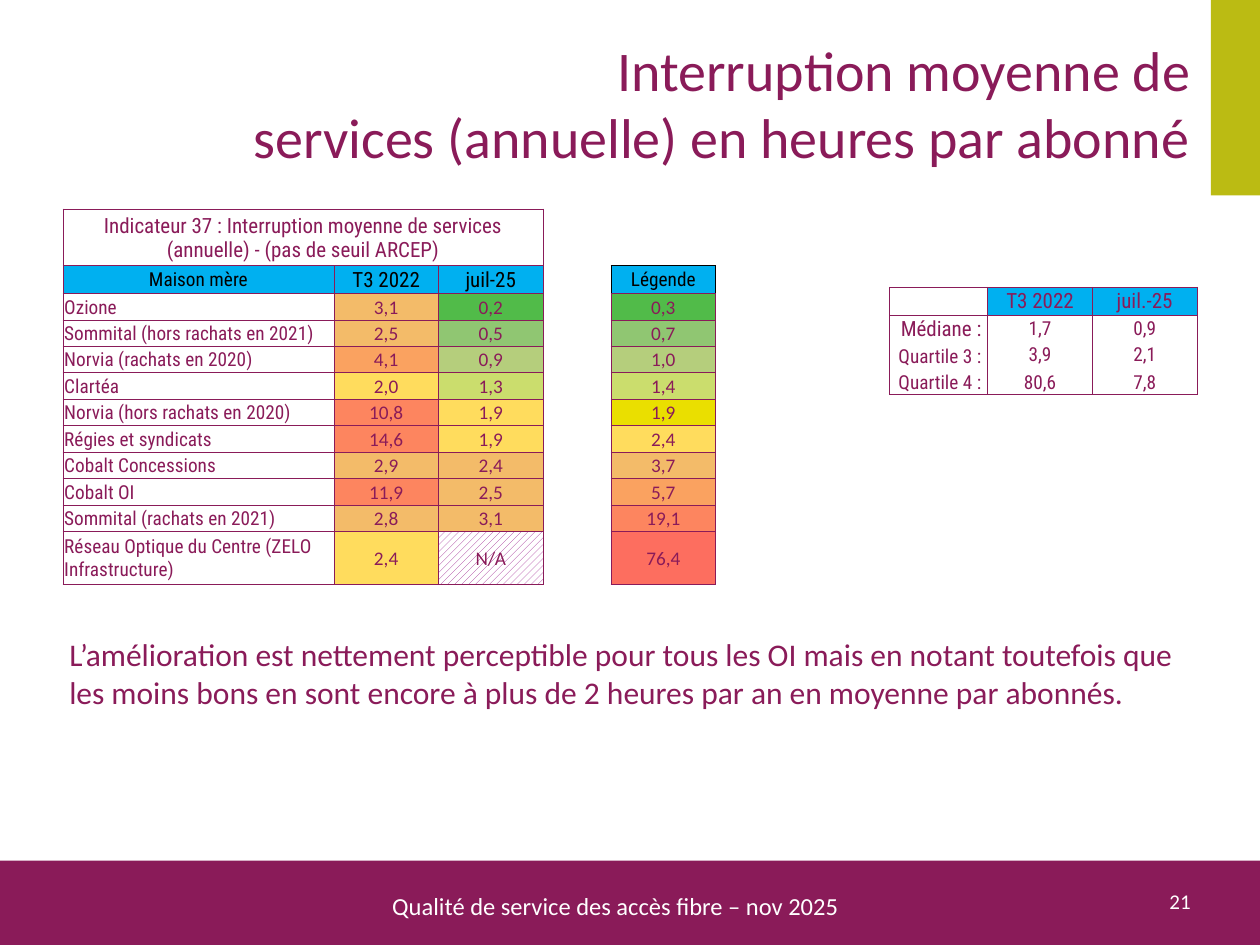
from dataclasses import dataclass

from lxml import etree
from pptx import Presentation
from pptx.dml.color import RGBColor
from pptx.enum.dml import MSO_PATTERN
from pptx.enum.shapes import MSO_SHAPE
from pptx.enum.text import MSO_ANCHOR, PP_ALIGN
from pptx.oxml.ns import qn
from pptx.util import Inches, Pt

LEFT, CENTER, RIGHT = PP_ALIGN.LEFT, PP_ALIGN.CENTER, PP_ALIGN.RIGHT
TOP, MIDDLE, BOTTOM = MSO_ANCHOR.TOP, MSO_ANCHOR.MIDDLE, MSO_ANCHOR.BOTTOM
RECTANGLE = MSO_SHAPE.RECTANGLE
HATCH = MSO_PATTERN.UPWARD_DIAGONAL

BODY_FONT = "Calibri"
TABLE_FONT = "Roboto Condensed"
COLORS = {
    "plum": "8A1B59", "olive": "BBBB13", "white": "FFFFFF", "black": "000000",
    "header": "00B0F0", "hatch": "A02B93",
    "green": "51BB49", "sage": "90C672", "moss": "B5CE7C", "lime": "CBDD6D",
    "lemon": "EADF00", "yellow": "FFDC5D", "sand": "F3BB69", "orange": "FAA260",
    "coral": "FD855F", "red": "FD6E5F",
}
VALUE_WIDTH = 0.83
HEADER_HEIGHT, ROW_HEIGHT, TALL_HEIGHT = 0.22, 0.21, 0.42


@dataclass
class Label:
    text: str
    left: float
    top: float
    width: float
    height: float
    size: int
    color: str = "plum"
    align: PP_ALIGN = LEFT
    anchor: MSO_ANCHOR = TOP
    wrap: bool = True


@dataclass
class Cell:
    text: str = ""
    fill: str = ""
    size: int = 11
    font: str = TABLE_FONT
    color: str = "plum"
    align: PP_ALIGN = CENTER
    anchor: MSO_ANCHOR = MIDDLE
    right_margin: float = 0.01
    edges: str = "LRTB"
    edge_color: str = "plum"


LABELS = [
    Label("Qualité de service des accès fibre – nov 2025", 2.39, 7.02, 4.99, 0.34, 14, "white", CENTER),
    Label("Interruption moyenne de\vservices (annuelle) en heures par abonné",
          0.5, 0.19, 9, 1.25, 32, align=RIGHT, anchor=MIDDLE),
    Label("L’amélioration est nettement perceptible pour tous les OI mais en notant toutefois que "
          "les moins bons en sont encore à plus de 2 heures par an en moyenne par abonnés.",
          0.5, 4.99, 9, 0.85, 18),
    Label("21", 9.22, 7.02, 0.28, 0.27, 12, "white", RIGHT, MIDDLE, False),
]
OPERATORS = [
    ("Ozione", "3,1", "sand", "0,2", "green"),
    ("Sommital (hors rachats en 2021)", "2,5", "sand", "0,5", "sage"),
    ("Norvia (rachats en 2020)", "4,1", "orange", "0,9", "moss"),
    ("Clartéa", "2,0", "yellow", "1,3", "lime"),
    ("Norvia (hors rachats en 2020)", "10,8", "coral", "1,9", "yellow"),
    ("Régies et syndicats", "14,6", "coral", "1,9", "yellow"),
    ("Cobalt Concessions", "2,9", "sand", "2,4", "sand"),
    ("Cobalt OI", "11,9", "coral", "2,5", "sand"),
    ("Sommital (rachats en 2021)", "2,8", "sand", "3,1", "sand"),
    ("Réseau Optique du Centre (ZELO Infrastructure)", "2,4", "yellow", "N/A", "hatch"),
]
LEGEND = [
    ("0,3", "green"), ("0,7", "sage"), ("1,0", "moss"), ("1,4", "lime"), ("1,9", "lemon"),
    ("2,4", "yellow"), ("3,7", "sand"), ("5,7", "orange"), ("19,1", "coral"), ("76,4", "red"),
]
STATISTICS = [
    ("Médiane :", "1,7", "0,9", 12, "LRT", MIDDLE, MIDDLE),
    ("Quartile 3 :", "3,9", "2,1", 11, "LR", BOTTOM, MIDDLE),
    ("Quartile 4 :", "80,6", "7,8", 11, "LRB", BOTTOM, BOTTOM),
]


def rgb(name: str) -> RGBColor:
    return RGBColor.from_string(COLORS[name])


def format_text(frame, text: str, size: int, font: str, color: str, align: PP_ALIGN) -> None:
    frame.text = text
    para = frame.paragraphs[0]
    para.alignment = align
    for span in para.runs:
        span.font.size = Pt(size)
        span.font.name = font
        span.font.color.rgb = rgb(color)


def draw_band(page, left: float, top: float, width: float, height: float, color: str) -> None:
    band = page.shapes.add_shape(RECTANGLE, Inches(left), Inches(top), Inches(width), Inches(height))
    band.shadow.inherit = False
    band.fill.solid()
    band.fill.fore_color.rgb = rgb(color)
    band.line.fill.background()


def draw_label(page, label: Label) -> None:
    box = page.shapes.add_textbox(
        Inches(label.left), Inches(label.top), Inches(label.width), Inches(label.height))
    frame = box.text_frame
    frame.word_wrap = label.wrap
    frame.vertical_anchor = label.anchor
    frame.margin_left = frame.margin_right = Inches(0.05)
    frame.margin_top = frame.margin_bottom = Inches(0.05)
    format_text(frame, label.text, label.size, BODY_FONT, label.color, label.align)


def draw_edges(target, cell: Cell) -> None:
    properties = target._tc.get_or_add_tcPr()
    for side in "LRTB":
        line = etree.SubElement(properties, qn(f"a:ln{side}"), w=str(Pt(0.5)))
        if side in cell.edges:
            color = "plum" if side == "B" else cell.edge_color
            fill = etree.SubElement(line, qn("a:solidFill"))
            etree.SubElement(fill, qn("a:srgbClr"), val=COLORS[color])
        else:
            etree.SubElement(line, qn("a:noFill"))


def draw_cell(target, cell: Cell) -> None:
    draw_edges(target, cell)
    if cell.fill == "hatch":
        target.fill.patterned()
        target.fill.pattern = HATCH
        target.fill.fore_color.rgb = rgb("hatch")
        target.fill.back_color.rgb = rgb("white")
    elif cell.fill:
        target.fill.solid()
        target.fill.fore_color.rgb = rgb(cell.fill)
    else:
        target.fill.background()
    target.margin_left = target.margin_top = Inches(0.01)
    target.margin_right = Inches(cell.right_margin)
    target.margin_bottom = 0
    target.vertical_anchor = cell.anchor
    format_text(target.text_frame, cell.text, cell.size, cell.font, cell.color, cell.align)
    target.text_frame.paragraphs[0].font.size = Pt(cell.size)


def draw_table(page, left: float, top: float, widths: list[float], heights: list[float],
               rows: list[list[Cell]]):
    table = page.shapes.add_table(
        len(heights), len(widths), Inches(left), Inches(top),
        Inches(sum(widths)), Inches(sum(heights))).table
    table.first_row = table.horz_banding = False
    for column, width in zip(table.columns, widths):
        column.width = Inches(width)
    for row, height in zip(table.rows, heights):
        row.height = Inches(height)
    for row, cells in zip(table.rows, rows):
        for target, cell in zip(row.cells, cells):
            draw_cell(target, cell)
    return table


def value(text: str, fill: str) -> Cell:
    return Cell(text, fill, font=BODY_FONT)


def header(text: str, size: int = 12, color: str = "black", edge_color: str = "plum") -> Cell:
    return Cell(text, "header", size, color=color, edge_color=edge_color)


def main() -> None:
    deck = Presentation()
    deck.slide_width, deck.slide_height = Inches(10), Inches(7.5)
    page = deck.slides.add_slide(deck.slide_layouts[6])
    draw_band(page, 0, 6.83, 10, 0.67, "plum")
    draw_band(page, 9.61, 0, 0.39, 1.55, "olive")
    for label in LABELS:
        draw_label(page, label)

    caption = Cell("Indicateur 37 : Interruption moyenne de services (annuelle) - (pas de seuil ARCEP)", size=12)
    operator_rows = [[caption, Cell(), Cell()],
                     [header("Maison mère", 11), header("T3 2022"), header("juil-25")]]
    for name, before, before_fill, after, after_fill in OPERATORS:
        operator_rows.append([Cell(name, align=LEFT), value(before, before_fill), value(after, after_fill)])
    heights = [HEADER_HEIGHT] + [ROW_HEIGHT] * (len(OPERATORS) - 1) + [TALL_HEIGHT]
    operators = draw_table(page, 0.5, 1.66, [2.15, VALUE_WIDTH, VALUE_WIDTH], [0.45] + heights, operator_rows)
    operators.cell(0, 0).merge(operators.cell(0, 2))

    legend_rows = [[header("Légende", 11, edge_color="black")]]
    legend_rows += [[value(text, fill)] for text, fill in LEGEND]
    draw_table(page, 4.85, 2.11, [VALUE_WIDTH], heights, legend_rows)

    statistic_rows = [[Cell(), header("T3 2022", color="plum"), header("juil.-25", color="plum")]]
    for name, before, after, size, edges, name_anchor, value_anchor in STATISTICS:
        title = Cell(name, size=size, align=RIGHT, anchor=name_anchor, right_margin=0.05, edges=edges)
        figures = [Cell(text, anchor=value_anchor, edges=edges) for text in (before, after)]
        statistic_rows.append([title, *figures])
    draw_table(page, 7.06, 2.28, [0.78, VALUE_WIDTH, VALUE_WIDTH],
               [HEADER_HEIGHT] + [ROW_HEIGHT] * len(STATISTICS), statistic_rows)
    deck.save("out.pptx")


if __name__ == "__main__":
    main()
